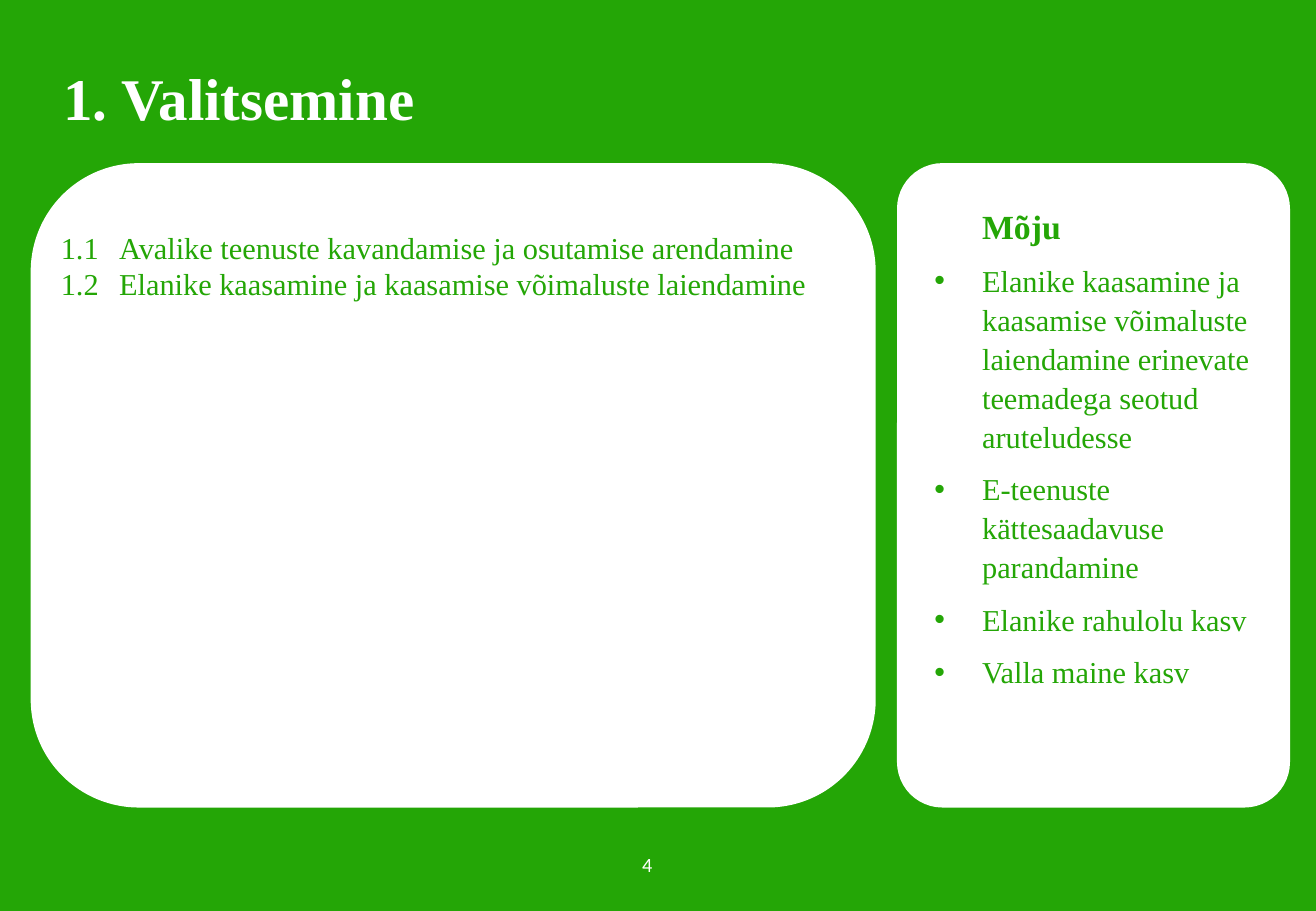
from dataclasses import dataclass

from lxml.etree import SubElement
from pptx import Presentation
from pptx.dml.color import RGBColor
from pptx.enum.shapes import MSO_SHAPE
from pptx.enum.text import MSO_ANCHOR, MSO_AUTO_SIZE, PP_ALIGN
from pptx.oxml.ns import qn
from pptx.util import Cm, Pt


@dataclass(frozen=True)
class Theme:
    green: RGBColor = RGBColor(0x24, 0xA6, 0x06)
    white: RGBColor = RGBColor(0xFF, 0xFF, 0xFF)
    serif: str = "Times New Roman"
    sans: str = "Calibri"
    title: Pt = Pt(35)
    heading: Pt = Pt(20)
    body: Pt = Pt(18)
    number: Pt = Pt(12)


THEME = Theme()
PANEL_TOP, PANEL_HEIGHT = Cm(3.43), Cm(13.44)
ACTIONS = [
    "1.1\tAvalike teenuste kavandamise ja osutamise arendamine",
    "1.2\tElanike kaasamine ja kaasamise võimaluste laiendamine",
]
EFFECTS = [
    "Elanike kaasamine ja kaasamise võimaluste laiendamine "
    "erinevate teemadega seotud aruteludesse",
    "E-teenuste kättesaadavuse parandamine",
    "Elanike rahulolu kasv",
    "Valla maine kasv",
]


def add_panel(s, left, width, radius):
    """Add a white rounded panel behind the text."""
    sp = s.shapes.add_shape(MSO_SHAPE.ROUNDED_RECTANGLE, left, PANEL_TOP, width, PANEL_HEIGHT)
    sp.adjustments[0] = radius
    sp.shadow.inherit = False
    sp.fill.solid()
    sp.fill.fore_color.rgb = THEME.white
    sp.line.color.rgb = THEME.white
    sp.line.width = Pt(1)
    sp.element.getparent().insert(2, sp.element)


def set_frame(sp, box, anchor, side_inset=Cm(0.13), wrap=True):
    """Place a text shape and return its text frame."""
    sp.left, sp.top, sp.width, sp.height = (Cm(length) for length in box)
    tf = sp.text_frame
    tf.auto_size = MSO_AUTO_SIZE.NONE
    tf.word_wrap = wrap
    tf.vertical_anchor = anchor
    tf.margin_left = tf.margin_right = side_inset
    tf.margin_top = tf.margin_bottom = Cm(0.13)
    return tf


def write(p, text, size, color, font=THEME.serif, bold=False,
          align=PP_ALIGN.LEFT, spacing=1.0, after=Pt(0)):
    p.alignment = align
    p.line_spacing = spacing
    p.space_before = Pt(0)
    p.space_after = after
    r = p.add_run()
    r.text = text
    r.font.name = font
    r.font.size = size
    r.font.bold = bold
    r.font.color.rgb = color


def set_indent(p, margin, first_line, bullet=None):
    pPr = p._p.get_or_add_pPr()
    pPr.set("marL", str(margin))
    pPr.set("indent", str(first_line))
    if bullet:
        SubElement(pPr, qn("a:buChar")).set("char", bullet)
    else:
        SubElement(pPr, qn("a:buNone"))


def paragraphs(tf, count):
    return [tf.paragraphs[0]] + [tf.add_paragraph() for _ in range(count - 1)]


def fill_actions(tf):
    for p, text in zip(paragraphs(tf, len(ACTIONS)), ACTIONS):
        write(p, text, THEME.body, THEME.green, align=PP_ALIGN.JUSTIFY)
        set_indent(p, Cm(1.22), -Cm(1.22))


def fill_effects(tf):
    heading, *items = paragraphs(tf, len(EFFECTS) + 1)
    write(heading, "Mõju", THEME.heading, THEME.green, bold=True, spacing=1.07, after=Pt(8))
    set_indent(heading, 0, Cm(1))
    for p, text in zip(items, EFFECTS):
        write(p, text, THEME.body, THEME.green, spacing=1.07, after=Pt(8))
        set_indent(p, Cm(1), -Cm(1), "•")


def main():
    prs = Presentation()
    prs.slide_width, prs.slide_height = Cm(27.51), Cm(19.05)
    s = prs.slides.add_slide(prs.slide_layouts.get_by_name("Two Content"))
    s.background.fill.solid()
    s.background.fill.fore_color.rgb = THEME.green

    add_panel(s, Cm(0.66), Cm(17.63), 0.167)
    add_panel(s, Cm(18.77), Cm(8.18), 0.114)

    title, actions, effects = s.placeholders
    tf = set_frame(title, (1.19, 1.32, 25.12, 1.6), MSO_ANCHOR.MIDDLE)
    write(tf.paragraphs[0], "1. Valitsemine", THEME.title, THEME.white, bold=True, spacing=0.9)
    fill_actions(set_frame(actions, (1.14, 4.65, 16.64, 1.8), MSO_ANCHOR.MIDDLE))
    fill_effects(set_frame(effects, (19.28, 4.11, 8.05, 10.49), MSO_ANCHOR.TOP, Cm(0.25)))

    number = s.shapes.add_textbox(0, 0, 0, 0)
    tf = set_frame(number, (13.26, 17.7, 0.51, 0.76), MSO_ANCHOR.MIDDLE, wrap=False)
    write(tf.paragraphs[0], "4", THEME.number, THEME.white, THEME.sans, align=PP_ALIGN.RIGHT)

    prs.save("out.pptx")


if __name__ == "__main__":
    main()
